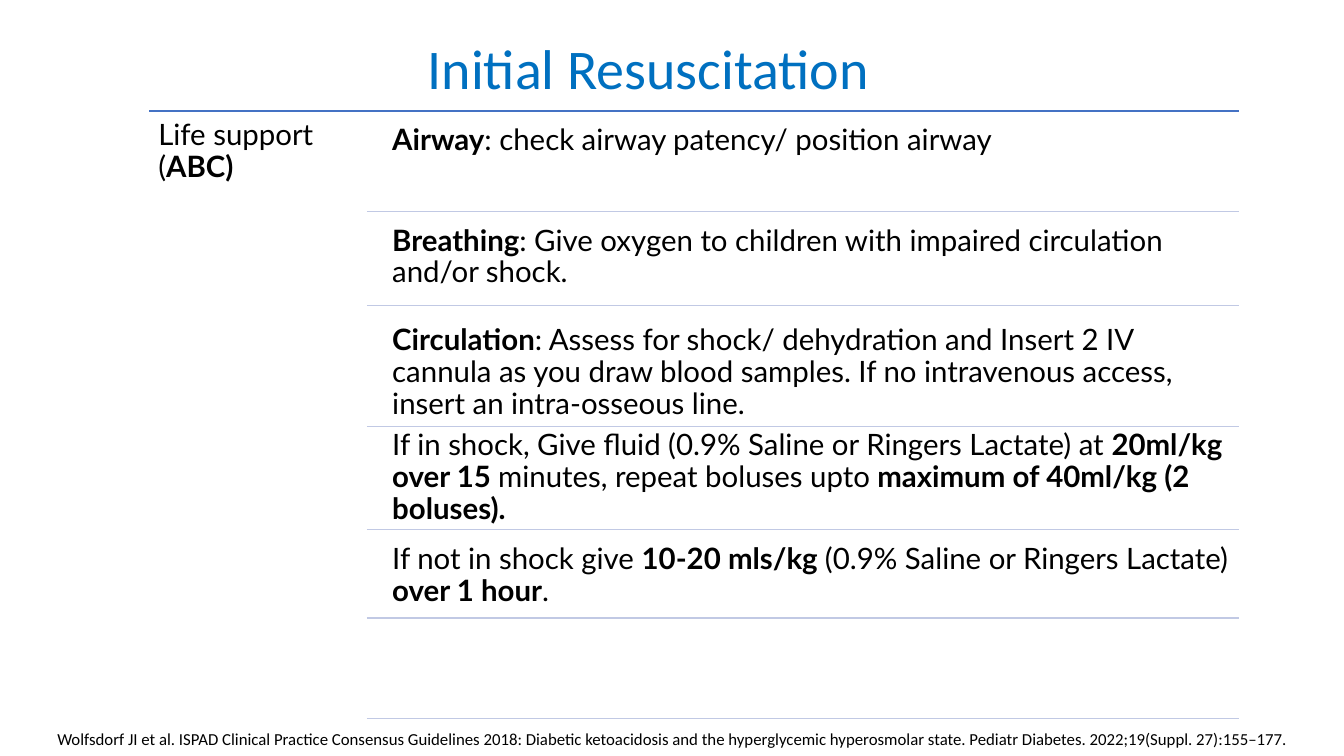
"""Builds the Initial Resuscitation slide."""
from lxml import etree
from pptx import Presentation
from pptx.dml.color import RGBColor
from pptx.enum.shapes import MSO_CONNECTOR
from pptx.enum.text import MSO_ANCHOR, PP_ALIGN
from pptx.oxml.ns import qn
from pptx.util import Inches, Pt

COLORS = {"title": "0070C0", "text": "000000", "top": "4472C4", "divider": "C1C9E4"}
LEFT, SPLIT, RIGHT = 1.48, 3.64, 12.29
STEP_LEFT = 3.8


def add_rule(s, left, y, color):
    line = s.shapes.add_connector(
        MSO_CONNECTOR.STRAIGHT, Inches(left), Inches(y), Inches(RIGHT), Inches(y))
    line.line.color.rgb = RGBColor.from_string(COLORS[color])
    line.line.width = Pt(1)
    etree.SubElement(line._element.spPr, qn("a:effectLst"))


def add_text(s, box, text, font="Lato", size=21, inset=0.09):
    """Adds a text box in which ** switches bold on and off."""
    tf = s.shapes.add_textbox(*map(Inches, box)).text_frame
    tf.word_wrap = True
    tf.margin_left = tf.margin_right = tf.margin_top = tf.margin_bottom = Inches(inset)
    p = tf.paragraphs[0]
    p.font.name, p.font.size = font, Pt(size)
    p.font.color.rgb = RGBColor.from_string(COLORS["text"])
    for i, part in enumerate(text.split("**")):
        if part:
            r = p.add_run()
            r.text = part
            r.font.bold = i % 2 == 1
    return p


prs = Presentation()
prs.slide_width, prs.slide_height = Inches(13.33), Inches(7.5)
s = prs.slides.add_slide(prs.slide_layouts[5])

title = s.shapes.title
title.left, title.top, title.width, title.height = map(Inches, (0.81, 0.17, 11.24, 1.08))
tf = title.text_frame
tf.text = "Initial Resuscitation"
tf.vertical_anchor = MSO_ANCHOR.MIDDLE
p = tf.paragraphs[0]
p.alignment, p.line_spacing = PP_ALIGN.CENTER, 0.9
p.font.name, p.font.size = "Calibri", Pt(40)
p.font.color.rgb = RGBColor.from_string(COLORS["title"])

add_rule(s, LEFT, 1.1, "top")
for y in (2.1, 3.03, 4.23, 5.25, 6.13, 7.13):
    add_rule(s, SPLIT, y, "divider")

p = add_text(s, (LEFT, 1.1, SPLIT - LEFT, 6.08), "Life support (**ABC)**")
p.line_spacing = 0.9

steps = [
    (1.15, "**Airway**: check airway patency/ position airway"),
    (2.15, "**Breathing**: Give oxygen to children with impaired circulation and/or shock."),
    (3.14, "**Circulation**: Assess for shock/ dehydration and Insert 2 IV cannula as you draw "
           "blood samples. If no intravenous access, insert an intra-osseous line."),
    (4.18, "If in shock, Give fluid (0.9% Saline or Ringers Lactate) at **20ml/kg over 15 **"
           "minutes, repeat boluses upto** maximum of 40ml/kg (2 boluses).**"),
    (5.31, "If not in shock give **10-20 mls/kg **(0.9% Saline or Ringers Lactate)"
           "** over 1 hour**."),
]
for top, text in steps:
    p = add_text(s, (STEP_LEFT, top, RIGHT - STEP_LEFT, 0.96), text)
    p.line_spacing = 0.9

p = add_text(
    s, (0.24, 7.18, 12.87, 0.3),
    "Wolfsdorf JI et al. ISPAD Clinical Practice Consensus Guidelines 2018: Diabetic "
    "ketoacidosis and the hyperglycemic hyperosmolar state. Pediatr Diabetes. "
    "2022;19(Suppl. 27):155–177.", "Calibri", 12, 0.05)
p.alignment = PP_ALIGN.CENTER

prs.save("out.pptx")
